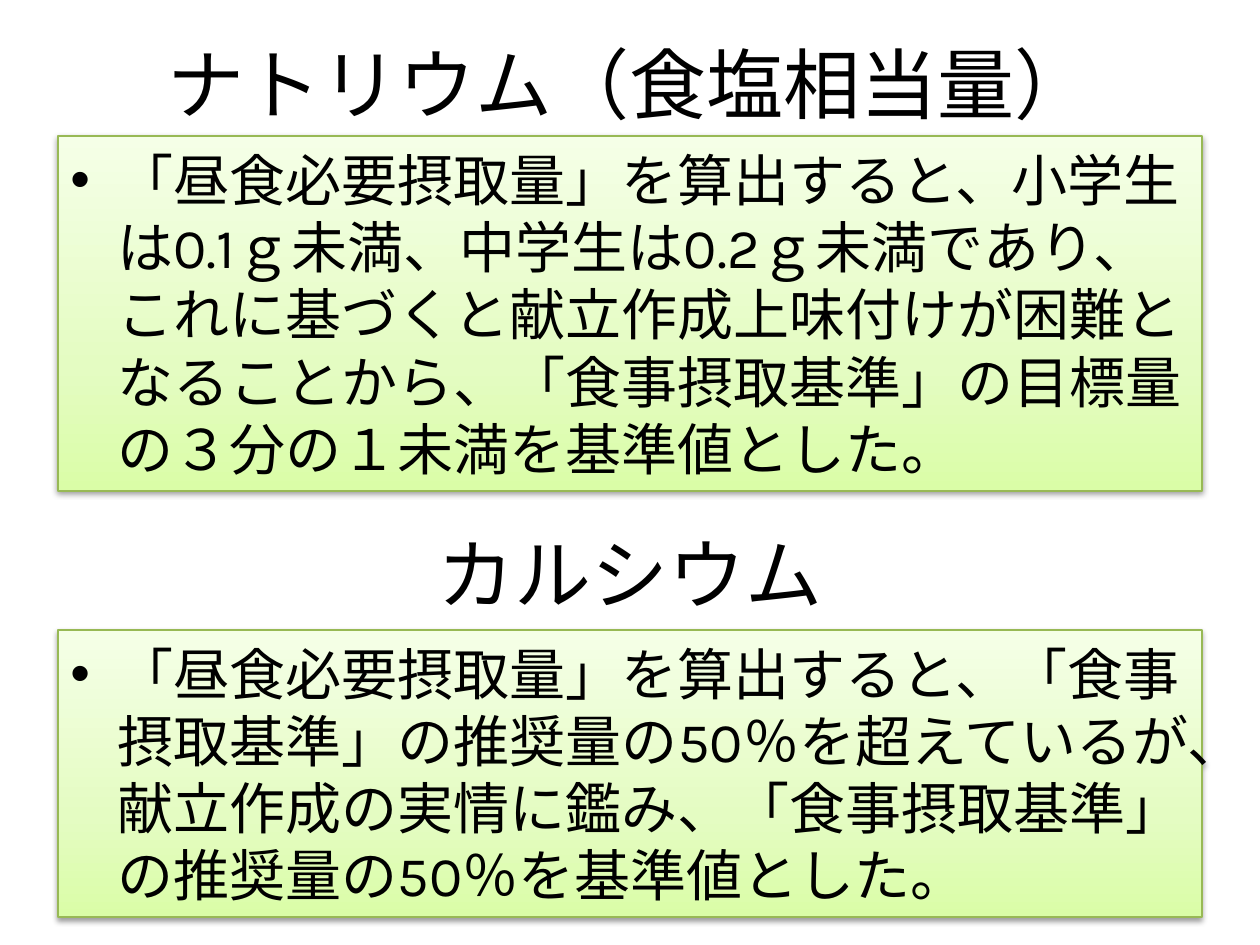
import lxml.etree
import pptx
import pptx.dml.color
import pptx.enum.lang
import pptx.enum.shapes
import pptx.enum.text
import pptx.oxml
import pptx.oxml.ns
import pptx.util
from pptx.util import Cm

# Each section: title, title (left, top, width), panel text, panel (top, height), in cm
SECTIONS = [
    ("ナトリウム（食塩相当量）", (1.57, 0.53, 22.25),
     "「昼食必要摂取量」を算出すると、小学生は0.1ｇ未満、中学生は0.2ｇ未満であり、"
     "これに基づくと献立作成上味付けが困難となることから、"
     "「食事摂取基準」の目標量の３分の１未満を基準値とした。", (2.74, 7.16)),
    ("カルシウム", (2.01, 10.41, 21.39),
     "「昼食必要摂取量」を算出すると、「食事摂取基準」の推奨量の50％を超えているが、"
     "献立作成の実情に鑑み、「食事摂取基準」の推奨量の50％を基準値とした。", (12.7, 5.79)),
]
COLORS = {"text": "000000", "line": "98B955", "shadow": "000000",
          "deep": "DAFDA7", "middle": "E4FCC2", "pale": "F5FFE7"}
GRADIENT = [(0, "deep"), (35, "middle"), (100, "pale")]
JAPANESE_FONT = "Noto Sans CJK JP"
TITLE_FONT = {"name": JAPANESE_FONT, "size": pptx.util.Pt(44)}
PANEL_FONT = {"name": "Karla", "size": pptx.util.Pt(32)}
TITLE_PARAGRAPH = {"alignment": pptx.enum.text.PP_ALIGN.CENTER}
PANEL_PARAGRAPH = {"alignment": pptx.enum.text.PP_ALIGN.LEFT,
                   "line_spacing": pptx.util.Pt(38.4)}
TITLE_HEIGHT = 2.29
PANEL_LEFT, PANEL_WIDTH = 1.17, 23.06
BULLET_INDENT = Cm(0.95)
NAMESPACE = pptx.oxml.ns.nsdecls("a")


def set_values(target, values):
    for name, value in values.items():
        setattr(target, name, value)


def write_text(shape, text, font_values, paragraph_values):
    frame = shape.text_frame
    set_values(frame, {"word_wrap": True,
                       "vertical_anchor": pptx.enum.text.MSO_ANCHOR.MIDDLE})
    paragraph = frame.paragraphs[0]
    set_values(paragraph, paragraph_values)
    run = paragraph.add_run()
    run.text = text
    set_values(run.font, font_values)
    run.font.language_id = pptx.enum.lang.MSO_LANGUAGE_ID.JAPANESE
    run.font.color.rgb = pptx.dml.color.RGBColor.from_string(COLORS["text"])
    east_asian = lxml.etree.SubElement(run.font._element, pptx.oxml.ns.qn("a:ea"))
    east_asian.set("typeface", JAPANESE_FONT)
    return paragraph


def add_bullet(paragraph):
    properties = paragraph._p.get_or_add_pPr()
    properties.set("marL", str(BULLET_INDENT))
    properties.set("indent", str(-BULLET_INDENT))
    for xml in (f'<a:buFont {NAMESPACE} typeface="Arial"/>',
                f'<a:buChar {NAMESPACE} char="•"/>'):
        properties.append(pptx.oxml.parse_xml(xml))


def style_panel(shape):
    """Gradient rising from the bottom edge, thin outline and soft shadow below."""
    shape.line.color.rgb = pptx.dml.color.RGBColor.from_string(COLORS["line"])
    shape.line.width = pptx.util.Pt(0.75)
    stops = "".join(
        f'<a:gs pos="{percent * 1000}"><a:srgbClr val="{COLORS[name]}"/></a:gs>'
        for percent, name in GRADIENT)
    gradient = pptx.oxml.parse_xml(
        f'<a:gradFill {NAMESPACE} rotWithShape="1"><a:gsLst>{stops}</a:gsLst>'
        '<a:lin ang="16200000" scaled="1"/></a:gradFill>')
    shadow = pptx.oxml.parse_xml(
        f'<a:effectLst {NAMESPACE}><a:outerShdw blurRad="40000" dist="20000" '
        f'dir="5400000" rotWithShape="0"><a:srgbClr val="{COLORS["shadow"]}">'
        '<a:alpha val="38000"/></a:srgbClr></a:outerShdw></a:effectLst>')
    properties = shape._element.spPr
    outline = properties.find(pptx.oxml.ns.qn("a:ln"))
    outline.addprevious(gradient)
    outline.addnext(shadow)


def main():
    presentation = pptx.Presentation()
    set_values(presentation, {"slide_width": Cm(25.4), "slide_height": Cm(19.05)})
    slide = presentation.slides.add_slide(presentation.slide_layouts[6])
    for title, (left, top, width), text, (panel_top, panel_height) in SECTIONS:
        title_box = slide.shapes.add_textbox(
            Cm(left), Cm(top), Cm(width), Cm(TITLE_HEIGHT))
        write_text(title_box, title, TITLE_FONT, TITLE_PARAGRAPH)
        panel = slide.shapes.add_shape(
            pptx.enum.shapes.MSO_SHAPE.RECTANGLE,
            Cm(PANEL_LEFT), Cm(panel_top), Cm(PANEL_WIDTH), Cm(panel_height))
        style_panel(panel)
        add_bullet(write_text(panel, text, PANEL_FONT, PANEL_PARAGRAPH))
    presentation.save("out.pptx")


if __name__ == "__main__":
    main()
